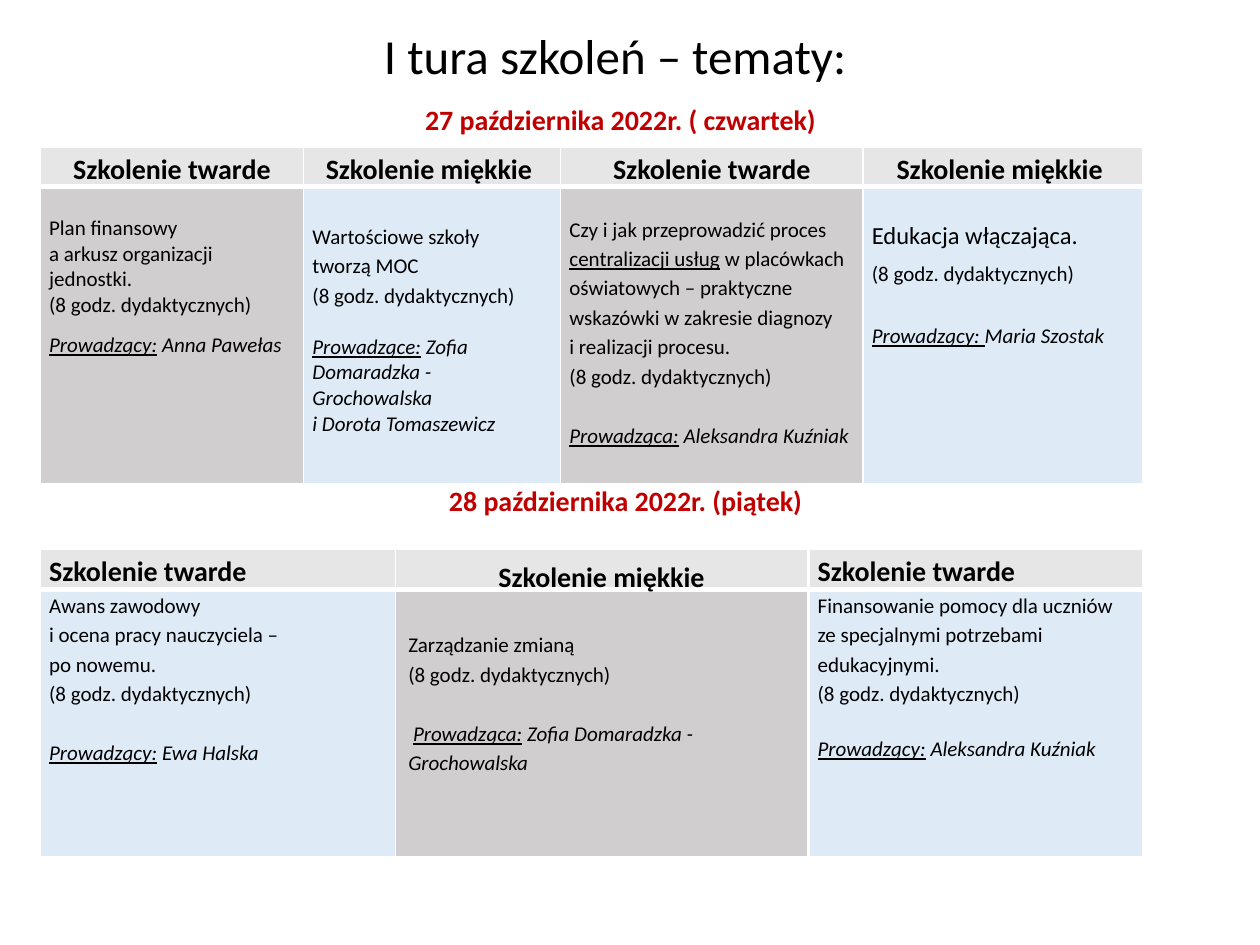
"""Build the slide listing the training topics of two days."""
from lxml import etree
from pptx import Presentation
from pptx import util as u
from pptx.dml.color import RGBColor
from pptx.enum import text
from pptx.oxml import ns

BLACK, RED, WHITE = "000000", "C00000", "FFFFFF"
HEADER, GREY, BLUE = "E7E6E6", "D0CECE", "DEEBF7"
LEFT, CENTER = text.PP_ALIGN.LEFT, text.PP_ALIGN.CENTER
HOURS = "(8 godz. dydaktycznych)"


def color(value):
    return RGBColor.from_string(value)


def write(tf, content, size=12, bold=False, italic=False, fill=BLACK,
          align=LEFT, spacing=1.15, before=0, after=0):
    """Add a paragraph; underscores enclose underlined words."""
    p = tf.paragraphs[0] if not tf.text else tf.add_paragraph()
    p.alignment, p.line_spacing = align, spacing
    p.space_before, p.space_after = u.Pt(before), u.Pt(after)
    for i, part in enumerate(content.split("_")):
        for j, line in enumerate(part.split("\n")):
            if j:
                p.add_line_break()
            if not line:
                continue
            r = p.add_run()
            r.text = line
            r.font.name, r.font.size = "Calibri", u.Pt(size)
            r.font.bold, r.font.italic = bold, italic
            r.font.underline = i % 2 == 1
            r.font.color.rgb = color(fill)


prs = Presentation()
prs.slide_width, prs.slide_height = u.Inches(10), u.Inches(7.5)
s = prs.slides.add_slide(prs.slide_layouts[5])

title = s.shapes.title
title.left, title.top = u.Inches(0.79), u.Inches(0.15)
title.width, title.height = u.Inches(8.27), u.Inches(1.51)
tf = title.text_frame
tf.auto_size = text.MSO_AUTO_SIZE.NONE
tf.vertical_anchor = text.MSO_ANCHOR.TOP
date = dict(size=16, bold=True, fill=RED, align=CENTER, spacing=1)
write(tf, "I tura szkoleń – tematy: ", size=28, align=CENTER, spacing=1, after=5.5)
write(tf, "27 października 2022r. ( czwartek)", before=5, **date)

head = dict(size=16, bold=True)
mid = dict(head, align=CENTER)
hard, soft = ("Szkolenie twarde", mid), ("Szkolenie miękkie ", mid)
tight = dict(spacing=1)
lead = dict(italic=True, before=17)

thursday = [
    [(HEADER, 0, [hard]), (HEADER, 0, [soft]), (HEADER, 0, [hard]), (HEADER, 0, [soft])],
    [
        (GREY, 0.23, [
            ("Plan finansowy \na arkusz organizacji jednostki.", tight),
            (HOURS, tight),
            ("_Prowadzący:_ Anna Pawełas", dict(italic=True, before=6))]),
        (BLUE, 0.27, [
            ("Wartościowe szkoły \ntworzą MOC", {}),
            (HOURS, {}),
            ("_Prowadzące:_ Zofia Domaradzka - Grochowalska \ni Dorota Tomaszewicz",
             dict(italic=True, spacing=1, before=14.5))]),
        (GREY, 0.21, [
            ("Czy i jak przeprowadzić proces _centralizacji usług_ w placówkach "
             "oświatowych – praktyczne wskazówki w zakresie diagnozy \n"
             "i realizacji procesu.", {}),
            (HOURS, {}),
            ("_Prowadząca:_ Aleksandra Kuźniak", lead)]),
        (BLUE, 0.27, [
            ("Edukacja włączająca.", dict(size=14, spacing=1)),
            (HOURS, dict(spacing=1, before=6)),
            ("_Prowadzący: _Maria Szostak", dict(italic=True, before=19))]),
    ],
]
friday = [
    [(HEADER, 0, [("Szkolenie twarde", head)]), (HEADER, 0, []),
     (HEADER, 0, [("Szkolenie twarde", head)])],
    [
        (BLUE, 0, [
            ("Awans zawodowy \ni ocena pracy nauczyciela – \npo nowemu.", {}),
            (HOURS, {}),
            ("_Prowadzący:_ Ewa Halska", lead)]),
        (GREY, 0, []),
        (BLUE, 0, [
            ("Finansowanie pomocy dla uczniów ze specjalnymi potrzebami edukacyjnymi.", {}),
            (HOURS, {}),
            ("_Prowadzący:_ Aleksandra Kuźniak", dict(lead, spacing=1))]),
    ],
]
change = [[(None, 0.05, [
    ("Szkolenie miękkie", mid),
    ("Zarządzanie zmianą", dict(before=19.5)),
    (HOURS, {}),
    (" _Prowadząca:_ Zofia Domaradzka - Grochowalska", lead)])]]

tables = [
    (0.32, 1.17, [2.09, 2.04, 2.4, 2.22], [0.27, 2.36], 0.07, thursday),
    (0.32, 4.36, [2.82, 3.28, 2.65], [0.32, 2.12], 0.07, friday),
    (3.14, 4.36, [3.27], [2.44], 0.1, change),
]
for left, top, widths, heights, side, rows in tables:
    table = s.shapes.add_table(
        len(heights), len(widths), u.Inches(left), u.Inches(top),
        u.Inches(sum(widths)), u.Inches(sum(heights))).table
    table.first_row = table.horz_banding = False
    for column, width in zip(table.columns, widths):
        column.width = u.Inches(width)
    for row, height, cells in zip(table.rows, heights, rows):
        row.height = u.Inches(height)
        for cell, (fill, inset, paragraphs) in zip(row.cells, cells):
            cell.margin_left = cell.margin_right = u.Inches(side)
            cell.margin_top, cell.margin_bottom = u.Inches(inset), 0
            tc_pr = cell._tc.get_or_add_tcPr()
            for edge in "LRTB":
                points = 3 if edge == "B" and fill == HEADER else 1
                ln = etree.SubElement(tc_pr, ns.qn("a:ln" + edge), w=str(u.Pt(points)))
                solid = etree.SubElement(ln, ns.qn("a:solidFill"))
                etree.SubElement(solid, ns.qn("a:srgbClr"), val=WHITE)
            if fill:
                cell.fill.solid()
                cell.fill.fore_color.rgb = color(fill)
            else:
                cell.fill.background()
            for content, style in paragraphs:
                write(cell.text_frame, content, **style)

box = s.shapes.add_textbox(u.Inches(3.14), u.Inches(3.79), u.Inches(3.65), u.Inches(0.37))
box.text_frame.word_wrap = True
write(box.text_frame, "28 października 2022r. (piątek)", **date)

prs.save("out.pptx")
